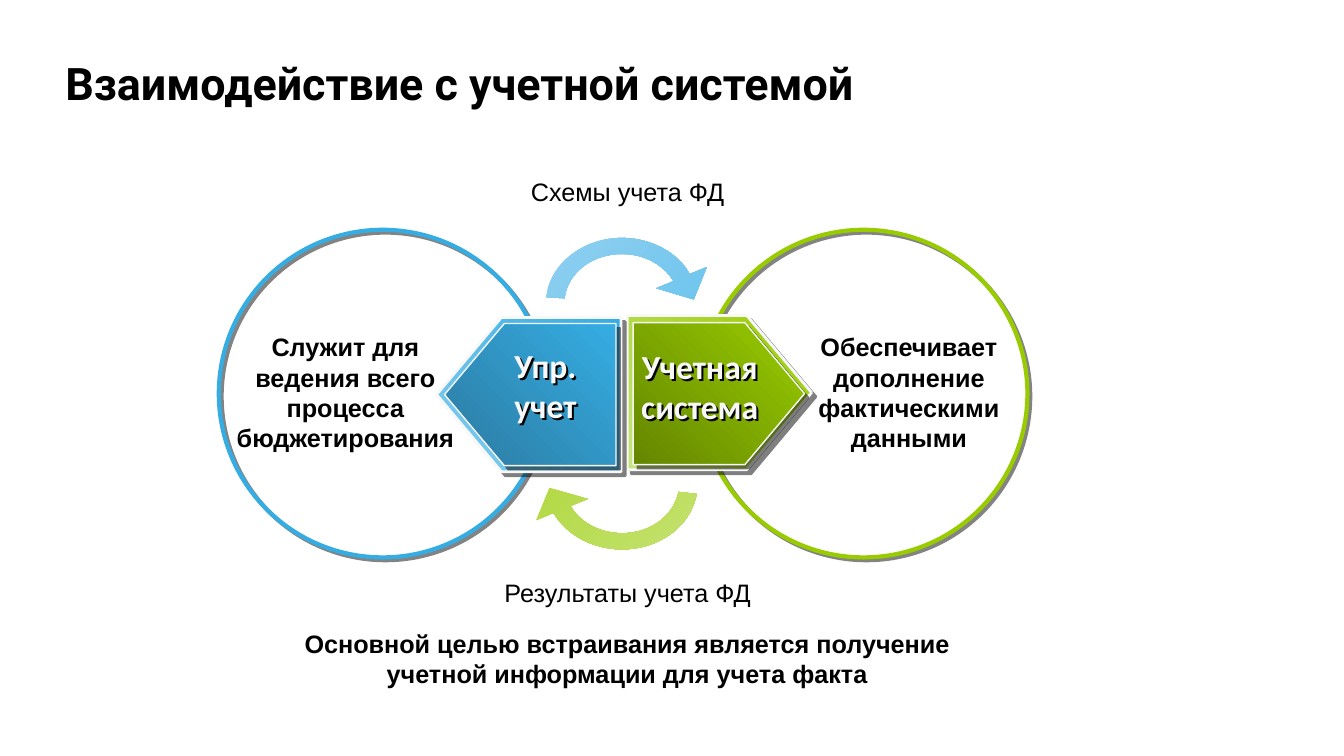
from lxml.etree import SubElement as Sub
from pptx import Presentation
from pptx.dml.color import RGBColor
from pptx.enum.shapes import MSO_SHAPE as SHAPE
from pptx.enum.text import MSO_ANCHOR as ANCHOR, PP_ALIGN as ALIGN
from pptx.oxml.ns import qn
from pptx.util import Pt

PX = 9144
BLUE, GREEN, PALE, BLACK = "35ADE3", "99CC00", "F8F8F8", "000000"
TOP_ARROW = [
    [(668, 279)],
    [(658, 262), (638, 252), (617, 252)],
    [(587, 252), (563, 271), (560, 296)],
    [(542, 295)],
    [(545, 262), (578, 236), (617, 236)],
    [(645, 236), (672, 250), (684, 272)],
    [(701, 265)], [(688, 297)], [(651, 286)],
]
BOTTOM_ARROW = [
    [(566, 502)],
    [(575, 518), (595, 529), (617, 529)],
    [(645, 529), (668, 512), (673, 488)],
    [(691, 490)],
    [(685, 522), (654, 545), (617, 545)],
    [(588, 545), (562, 531), (549, 509)],
    [(532, 516)], [(545, 484)], [(583, 495)],
]


def rgb(color):
    return RGBColor.from_string(color)


class Diagram:
    """Draws styled elements on one slide, with lengths in px."""

    def __init__(self, slide):
        self.shapes = slide.shapes

    def box(self, *lengths):
        return [n * PX for n in lengths]

    def shadow(self, s, color, distance, alpha=50):
        s.shadow.inherit = False
        effects = s.element.spPr.find(qn("a:effectLst"))
        outer = Sub(effects, qn("a:outerShdw"), blurRad="0", dist=str(Pt(distance)),
                    dir="2700000", algn="ctr", rotWithShape="0")
        clr = Sub(outer, qn("a:srgbClr"), val=color)
        Sub(clr, qn("a:alpha"), val=str(alpha * 1000))

    def gradient(self, s, colors, angle, alpha=100):
        s.fill.gradient()
        s.fill.gradient_angle = angle
        for stop, color in zip(s.fill.gradient_stops, colors):
            stop.color.rgb = rgb(color)
        if alpha < 100:
            for clr in s.element.spPr.iter(qn("a:srgbClr")):
                Sub(clr, qn("a:alpha"), val=str(alpha * 1000))

    def outline(self, s, color, width):
        s.line.color.rgb = rgb(color)
        s.line.width = Pt(width)

    def circle(self, x, y, size, color):
        s = self.shapes.add_shape(SHAPE.OVAL, *self.box(x, y, size, size))
        s.fill.background()
        self.outline(s, color, 3)
        self.shadow(s, "080808", 2.8)

    def plate(self, x, y, w, h, colors, angle, width, flip):
        s = self.shapes.add_shape(SHAPE.PENTAGON, *self.box(x, y, w, h))
        s.adjustments[0] = 0.42
        self.gradient(s, colors, angle)
        self.outline(s, PALE, width)
        self.shadow(s, BLACK, 4.2)
        if flip:
            s.element.spPr.xfrm.set("flipH", "1")

    def curved_arrow(self, segments, colors):
        ends = [self.box(*segment[-1]) for segment in segments]
        builder = self.shapes.build_freeform(*ends[0], scale=1.0)
        builder.add_line_segments(ends[1:], close=True)
        s = builder.convert_to_shape()
        lines = list(s.element.spPr.iter(qn("a:lnTo")))
        for line, segment in zip(lines, segments[1:]):
            if len(segment) == 3:
                line.tag = qn("a:cubicBezTo")
                line.remove(line[0])
                for x, y in segment:
                    Sub(line, qn("a:pt"), x=str(x * PX - s.left), y=str(y * PX - s.top))
        s.shadow.inherit = False
        s.line.fill.background()
        self.gradient(s, colors, 315, 80)

    def text(self, x, y, w, h, words, size=18, font="Arial", color=BLACK,
             bold=True, align=ALIGN.CENTER):
        s = self.shapes.add_textbox(*self.box(x, y, w, h))
        tf = s.text_frame
        tf.word_wrap = True
        p = tf.paragraphs[0]
        p.text = words
        p.alignment = align
        f = p.font
        f.size, f.name, f.bold = Pt(size), font, bold
        f.color.rgb = rgb(color)
        return s


def main():
    prs = Presentation()
    prs.slide_width, prs.slide_height = 1333 * PX, 750 * PX
    d = Diagram(prs.slides.add_slide(prs.slide_layouts[6]))

    d.circle(694, 228, 325, GREEN)
    d.circle(217, 228, 325, BLUE)
    d.text(222, 324, 241, 131, "Служит для ведения всего процесса бюджетирования")
    d.text(793, 324, 217, 131, "Обеспечивает дополнение фактическими данными")
    d.text(278, 618, 688, 71, "Основной целью встраивания является получение "
                              "учетной информации для учета факта")
    d.curved_arrow(TOP_ARROW, ("73C4EC", "4CB7EA"))

    d.plate(622, 313, 183, 153, ("C8E580", GREEN), 45, 2, False)
    d.plate(628, 320, 170, 141, ("648600", GREEN), 45, 1, False)
    d.plate(433, 315, 183, 153, (BLUE, "86CDEE"), 315, 2, True)
    d.plate(441, 321, 170, 141, (BLUE, "2C7AA0"), 315, 1, True)
    for x, y, words in ((471, 337, "Упр. учет"), (624, 338, "Учетная система")):
        label = d.text(x, y, 140, 91, words, 24, "Calibri", PALE)
        d.shadow(label, BLACK, 2, 100)

    d.text(510, 170, 225, 40, "Схемы учета ФД", bold=False)
    d.text(474, 568, 297, 40, "Результаты учета ФД", bold=False)
    d.curved_arrow(BOTTOM_ARROW, ("A0D017", "B5DB4C"))

    title = d.text(55, 54, 1073, 63, "Взаимодействие с учетной системой", 32,
                   "Roboto", align=ALIGN.LEFT).text_frame
    title.vertical_anchor = ANCHOR.MIDDLE
    title.paragraphs[0].line_spacing = 0.9
    prs.save("out.pptx")


if __name__ == "__main__":
    main()
